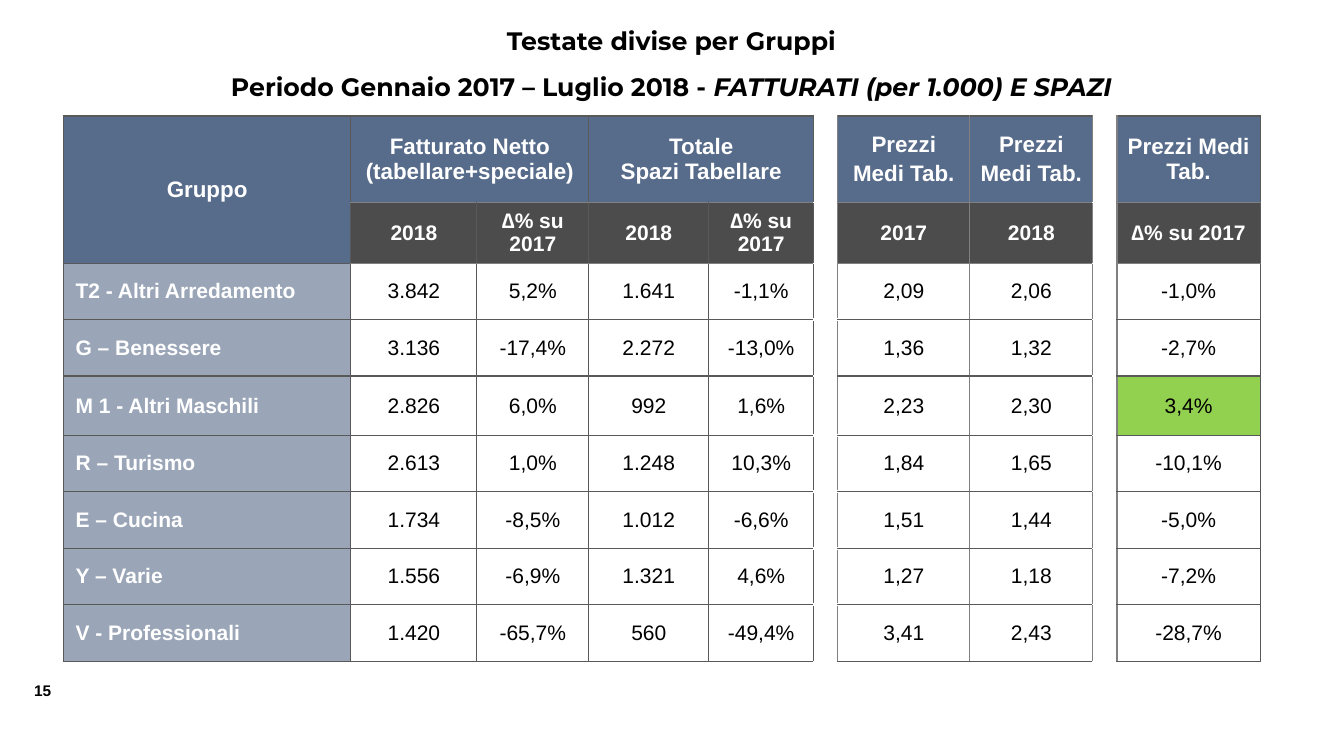
from lxml import etree
from pptx import Presentation
from pptx.dml.color import RGBColor
from pptx.enum.text import MSO_ANCHOR, MSO_AUTO_SIZE, PP_ALIGN
from pptx.oxml.ns import qn
from pptx.util import Inches, Pt

MIDDLE = MSO_ANCHOR.MIDDLE
CENTER, LEFT = PP_ALIGN.CENTER, PP_ALIGN.LEFT
NO_FIT = MSO_AUTO_SIZE.NONE

COLORS = {"blue": "576B8A", "black": "000000", "white": "FFFFFF",
          "green": "92D050", "dark line": "595959", "grey line": "808080"}

TITLE = [("Testate divise per Gruppi", False),
         ("Periodo Gennaio 2017 – Luglio 2018 - ", False),
         ("FATTURATI (per 1.000) E SPAZI", True)]
PAGE_NUMBER = "15"

GROUP_HEADS = ["Gruppo", "Fatturato Netto (tabellare+speciale)", "",
               "Totale\nSpazi Tabellare", "", "", "Prezzi\nMedi Tab.",
               "Prezzi\nMedi Tab.", "", "Prezzi Medi Tab."]
YEAR_HEADS = ["", "2018", "∆% su 2017", "2018", "∆% su 2017", "",
              "2017", "2018", "", "∆% su 2017"]
FIGURES = [
    ["T2 - Altri Arredamento", "3.842", "5,2%", "1.641", "-1,1%", "", "2,09", "2,06", "", "-1,0%"],
    ["G – Benessere", "3.136", "-17,4%", "2.272", "-13,0%", "", "1,36", "1,32", "", "-2,7%"],
    ["M 1 - Altri Maschili", "2.826", "6,0%", "992", "1,6%", "", "2,23", "2,30", "", "3,4%"],
    ["R – Turismo", "2.613", "1,0%", "1.248", "10,3%", "", "1,84", "1,65", "", "-10,1%"],
    ["E – Cucina", "1.734", "-8,5%", "1.012", "-6,6%", "", "1,51", "1,44", "", "-5,0%"],
    ["Y – Varie", "1.556", "-6,9%", "1.321", "4,6%", "", "1,27", "1,18", "", "-7,2%"],
    ["V - Professionali", "1.420", "-65,7%", "560", "-49,4%", "", "3,41", "2,43", "", "-28,7%"],
]
ROWS = [GROUP_HEADS, YEAR_HEADS] + FIGURES
COLUMN_WIDTHS = [2.85, 1.25, 1.11, 1.19, 1.04, 0.24, 1.31, 1.22, 0.24, 1.42]
ROW_HEIGHTS = [0.86, 0.6, 0.56, 0.56, 0.59, 0.56, 0.56, 0.56, 0.56]
MERGES = [((0, 0), (1, 0)), ((0, 1), (0, 2)), ((0, 3), (0, 4))]
GAPS = (5, 8)
PRICE_COLUMNS = (6, 7)
LAST_COLUMN = len(COLUMN_WIDTHS) - 1
RISING = "3,4%"


def rgb(name):
    return RGBColor.from_string(COLORS[name])


def vertical_line(edge):
    return ("grey line" if GAPS[0] < edge <= LAST_COLUMN else "dark line"), 1


def horizontal_line(column, edge):
    if column in GAPS:
        thick = column == GAPS[0] and 3 <= edge < len(ROWS)
        return "white", 2.25 if thick else 1
    return ("grey line" if column and edge in (1, 2) else "dark line"), 1


def draw_borders(cell, row, column):
    sides = [("a:lnL", vertical_line(column)),
             ("a:lnR", vertical_line(column + 1)),
             ("a:lnT", horizontal_line(column, row)),
             ("a:lnB", horizontal_line(column, row + 1))]
    properties = cell._tc.get_or_add_tcPr()
    for tag, (color, width) in sides:
        line = etree.SubElement(properties, qn(tag), w=str(Pt(width)))
        solid = etree.SubElement(line, qn("a:solidFill"))
        etree.SubElement(solid, qn("a:srgbClr"), val=COLORS[color])


def cell_fill(row, column, text):
    if column in GAPS:
        return "white", 100
    if row == 0 or (row == 1 and column == 0):
        return "blue", 100
    if row == 1:
        return "black", 70
    if column == 0:
        return "blue", 60
    if column == LAST_COLUMN:
        return ("green" if text == RISING else "white"), 100
    return None, 100


def paint(cell, color, opacity):
    if color is None:
        cell.fill.background()
        return
    cell.fill.solid()
    cell.fill.fore_color.rgb = rgb(color)
    if opacity < 100:
        tint = cell._tc.tcPr.find(qn("a:solidFill"))[0]
        etree.SubElement(tint, qn("a:alpha"), val=str(opacity * 1000))


def write_cell(cell, row, column, text):
    heading = row < 2
    label = column == 0 and not heading
    cell.vertical_anchor = MIDDLE
    if not heading:
        cell.margin_left = Inches(0.12 if label else 0)
        cell.margin_right = cell.margin_top = cell.margin_bottom = 0
    cell.text = text
    for index, para in enumerate(cell.text_frame.paragraphs):
        para.alignment = LEFT if label else CENTER
        if index and column in PRICE_COLUMNS:
            para.space_before = Pt(3.2)
        para.font.name = "Arial"
        para.font.size = Pt(16 if row == 0 else 15)
        para.font.bold = heading or label
        para.font.color.rgb = rgb("white" if heading or label else "black")


def add_title(page):
    title = page.shapes.title
    title.left, title.top = Inches(1.11), Inches(0.02)
    title.width, title.height = Inches(11.1), Inches(1.07)
    frame = title.text_frame
    frame.auto_size = NO_FIT
    frame.word_wrap = True
    frame.vertical_anchor = MIDDLE
    para = frame.paragraphs[0]
    para.alignment = CENTER
    para.line_spacing = 1.5
    for index, (text, italic) in enumerate(TITLE):
        if index == 1:
            para.add_line_break()
        span = para.add_run()
        span.text = text
        span.font.italic = italic
        span.font.name = "Montserrat"
        span.font.size = Pt(18)
        span.font.bold = True
        span.font.color.rgb = rgb("black")


def add_figures(page):
    table = page.shapes.add_table(
        len(ROWS), len(COLUMN_WIDTHS), Inches(0.63), Inches(1.15),
        Inches(sum(COLUMN_WIDTHS)), Inches(sum(ROW_HEIGHTS))).table
    table.first_row = table.horz_banding = False
    for column, width in zip(table.columns, COLUMN_WIDTHS):
        column.width = Inches(width)
    for row, height in zip(table.rows, ROW_HEIGHTS):
        row.height = Inches(height)
    for start, end in MERGES:
        table.cell(*start).merge(table.cell(*end))
    for row, texts in enumerate(ROWS):
        for column, text in enumerate(texts):
            cell = table.cell(row, column)
            draw_borders(cell, row, column)
            paint(cell, *cell_fill(row, column, text))
            if text:
                write_cell(cell, row, column, text)


def add_page_number(page):
    box = page.shapes.add_textbox(Inches(0.24), Inches(6.71), Inches(0.42), Inches(0.29))
    box.text_frame.word_wrap = False
    para = box.text_frame.paragraphs[0]
    para.text = PAGE_NUMBER
    para.font.name = "Arial"
    para.font.size = Pt(11)
    para.font.bold = True
    para.font.color.rgb = rgb("black")


def main():
    deck = Presentation()
    deck.slide_width, deck.slide_height = Inches(13.33), Inches(7.5)
    page = deck.slides.add_slide(deck.slide_layouts[5])
    add_page_number(page)
    add_title(page)
    add_figures(page)
    deck.save("out.pptx")


if __name__ == "__main__":
    main()
